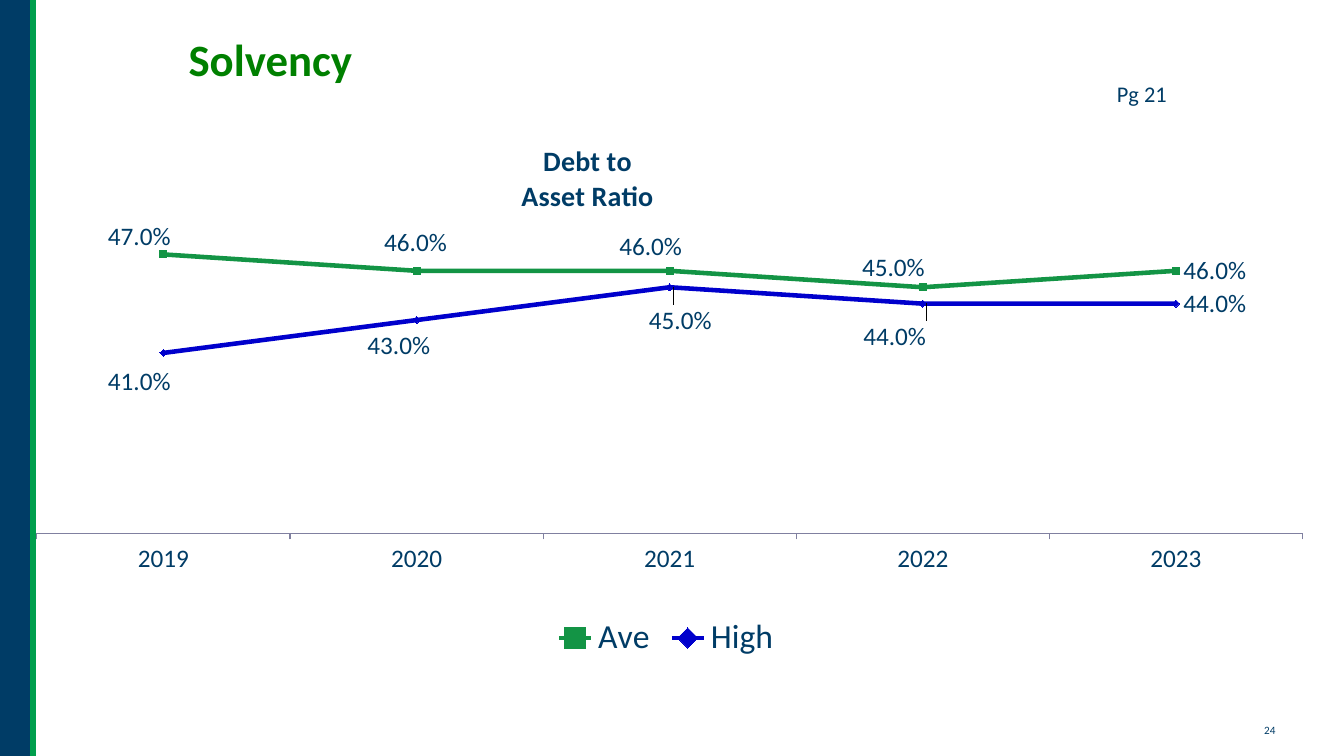
from lxml import etree
from pptx import Presentation
from pptx.chart.data import CategoryChartData
from pptx.dml.color import RGBColor
from pptx.enum.chart import XL_CHART_TYPE, XL_LABEL_POSITION, XL_LEGEND_POSITION, XL_TICK_MARK
from pptx.enum.shapes import MSO_CONNECTOR, MSO_SHAPE
from pptx.enum.text import MSO_ANCHOR, PP_ALIGN
from pptx.oxml.ns import qn
from pptx.util import Inches, Pt

LINE_CHART = XL_CHART_TYPE.LINE
LABEL_RIGHT = XL_LABEL_POSITION.RIGHT
LEGEND_BOTTOM = XL_LEGEND_POSITION.BOTTOM
TICK_OUTSIDE, TICK_NONE = XL_TICK_MARK.OUTSIDE, XL_TICK_MARK.NONE
MIDDLE = MSO_ANCHOR.MIDDLE
LEFT, RIGHT = PP_ALIGN.LEFT, PP_ALIGN.RIGHT

FONT = "Calibri"
COLORS = {"navy": "003C66", "stripe": "009F4D", "title": "008000",
          "average": "139445", "high": "0000CC", "axis": "8080A0"}
TITLE = "Solvency"
CHART_TITLE = ("Debt to", "Asset Ratio")
YEARS = ("2019", "2020", "2021", "2022", "2023")
# Label shifts are inches from the default place, right of the point.
SERIES = (
    {"name": "Ave", "color": "average", "values": (0.47, 0.46, 0.46, 0.45, 0.46),
     "shifts": ((-0.63, -0.18), (-0.4, -0.28), (-0.58, -0.24), (-0.68, -0.2))},
    {"name": "High", "color": "high", "values": (0.41, 0.43, 0.45, 0.44, 0.44),
     "shifts": ((-0.63, 0.29), (-0.56, 0.25), (-0.28, 0.33), (-0.66, 0.32))},
)
CHART_BOX = (0.2, 1.12, 12.77, 5.55)
TEXTS = (
    {"text": "Pg 21", "box": (10.5, 0.75, 1.17, 0.37), "size": 16, "align": RIGHT, "wrap": True},
    {"text": "24", "box": (12.44, 7.13, 0.34, 0.24), "size": 8, "align": LEFT, "wrap": False},
)


def color(name):
    return RGBColor.from_string(COLORS[name])


def set_font(font, size, color_name="navy", bold=False):
    font.name, font.size, font.bold = FONT, Pt(size), bold
    font.color.rgb = color(color_name)


def set_layout(element, position, **settings):
    """Give a chart part a manual layout, in its place in the schema order."""
    for old in element.findall(qn("c:layout")):
        element.remove(old)
    layout = etree.Element(qn("c:layout"))
    manual = etree.SubElement(layout, qn("c:manualLayout"))
    for tag, value in settings.items():
        etree.SubElement(manual, qn(f"c:{tag}")).set("val", str(value))
    element.insert(position, layout)


def add_side_band(slide):
    band = slide.shapes.add_shape(MSO_SHAPE.RECTANGLE, 0, 0, Inches(0.33), Inches(7.5))
    band.shadow.inherit = False
    band.fill.solid()
    band.fill.fore_color.rgb = color("navy")
    band.line.fill.background()
    stripe = slide.shapes.add_connector(
        MSO_CONNECTOR.STRAIGHT, Inches(0.33), 0, Inches(0.33), Inches(7.5))
    stripe.line.color.rgb = color("stripe")
    stripe.line.width = Pt(4.5)
    etree.SubElement(stripe.element.spPr, qn("a:effectLst"))


def format_title(title):
    title.left, title.top, title.width, title.height = map(Inches, (1.67, 0.04, 5.42, 1.08))
    frame = title.text_frame
    frame.text = TITLE
    frame.margin_left = Inches(0.2)
    frame.vertical_anchor = MIDDLE
    paragraph = frame.paragraphs[0]
    paragraph.alignment = LEFT
    set_font(paragraph.font, 32, "title", True)


def add_text(slide, text, box, size, align, wrap):
    frame = slide.shapes.add_textbox(*map(Inches, box)).text_frame
    frame.text = text
    frame.word_wrap = wrap
    paragraph = frame.paragraphs[0]
    paragraph.alignment = align
    set_font(paragraph.font, size)


def format_series(series, details):
    series.smooth = False
    series.marker.style = None
    series.format.line.color.rgb = color(details["color"])
    series.format.line.width = Pt(3.25)
    labels = series.data_labels
    labels.show_value = True
    labels.number_format, labels.number_format_is_linked = "0.0%", False
    labels.position = LABEL_RIGHT
    set_font(labels.font, 18)
    for index, (across, down) in enumerate(details["shifts"]):
        label = series.points[index].data_label
        set_font(label.font, 18)
        label.position = LABEL_RIGHT
    for element, (across, down) in zip(labels._element.findall(qn("c:dLbl")), details["shifts"]):
        set_layout(element, 1, x=round(across / CHART_BOX[2], 3), y=round(down / CHART_BOX[3], 3))


def add_ratio_chart(slide):
    data = CategoryChartData(number_format="0.0%")
    data.categories = YEARS
    for details in SERIES:
        data.add_series(details["name"], details["values"])
    chart = slide.shapes.add_chart(LINE_CHART, *map(Inches, CHART_BOX), data).chart
    set_font(chart.font, 18)
    chart.plots[0].vary_by_categories = False

    title_frame = chart.chart_title.text_frame
    title_frame.text = "\n".join(CHART_TITLE)
    for paragraph in title_frame.paragraphs:
        set_font(paragraph.font, 20, bold=True)
    set_layout(chart.chart_title._element, 1, xMode="edge", yMode="edge", x=0.387, y=0.047)

    value_axis = chart.value_axis
    value_axis.minimum_scale, value_axis.maximum_scale = 0.3, 0.5
    value_axis.major_unit = 0.1
    value_axis.has_major_gridlines = False
    value_axis.visible = False
    year_axis = chart.category_axis
    year_axis.major_tick_mark, year_axis.minor_tick_mark = TICK_OUTSIDE, TICK_NONE
    year_axis.format.line.color.rgb = color("axis")
    set_font(year_axis.tick_labels.font, 18)

    chart.has_legend = True
    chart.legend.position = LEGEND_BOTTOM
    chart.legend.include_in_layout = False
    set_font(chart.legend.font, 24)
    set_layout(chart.legend._element, 1, xMode="edge", yMode="edge", x=0.41, y=0.89)

    plot_area = chart.plots[0]._element.getparent()
    set_layout(plot_area, 0, layoutTarget="inner", xMode="edge", yMode="edge",
               x=0.013, y=0.165, w=0.983, h=0.587)
    for series, details in zip(chart.plots[0].series, SERIES):
        format_series(series, details)


def main():
    presentation = Presentation()
    presentation.slide_width, presentation.slide_height = Inches(13.33), Inches(7.5)
    slide = presentation.slides.add_slide(presentation.slide_layouts[5])
    add_side_band(slide)
    format_title(slide.shapes.title)
    for text in TEXTS:
        add_text(slide, **text)
    add_ratio_chart(slide)
    presentation.save("out.pptx")


if __name__ == "__main__":
    main()
